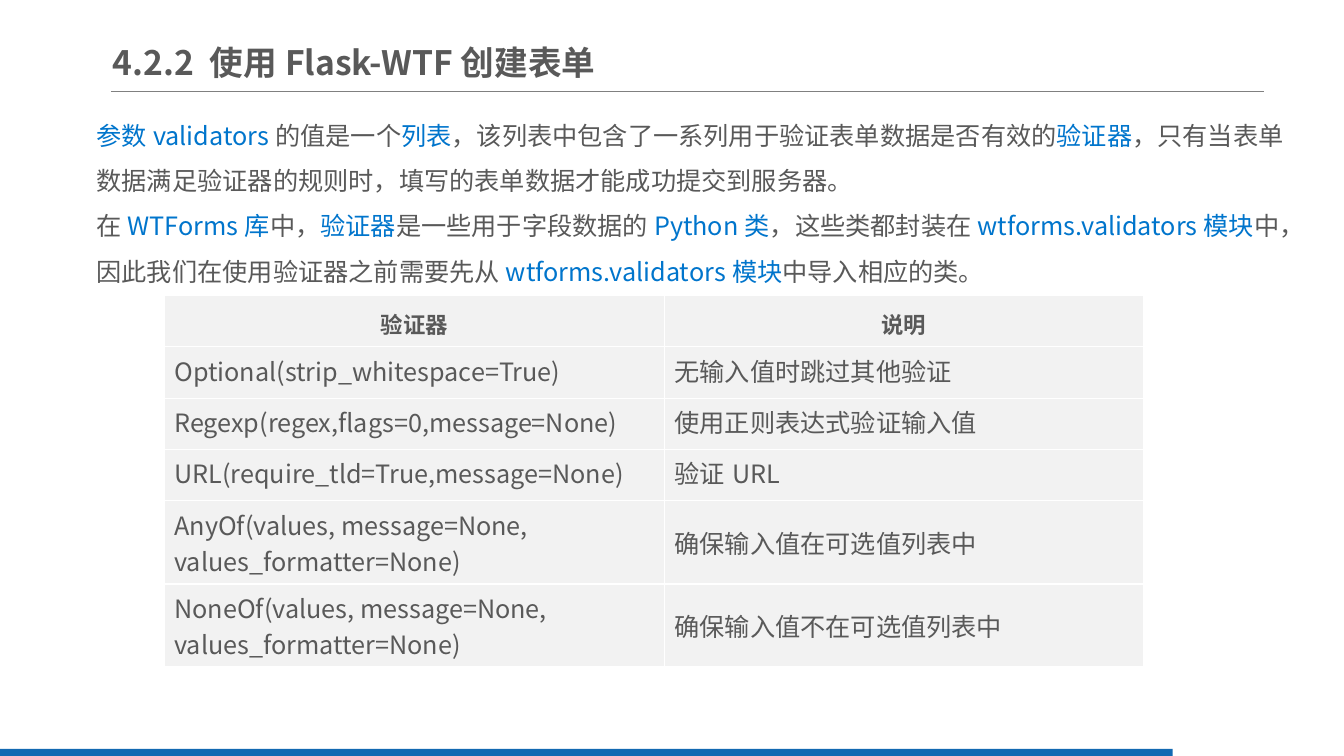
from dataclasses import dataclass

from lxml import etree
from pptx import Presentation
from pptx.dml.color import RGBColor
from pptx.enum.shapes import MSO_CONNECTOR, MSO_SHAPE
from pptx.enum.text import MSO_ANCHOR, MSO_AUTO_SIZE, PP_ALIGN
from pptx.oxml.ns import qn
from pptx.util import Inches, Pt

LEFT, CENTER = PP_ALIGN.LEFT, PP_ALIGN.CENTER
TOP, MIDDLE = MSO_ANCHOR.TOP, MSO_ANCHOR.MIDDLE
STRAIGHT, RECTANGLE = MSO_CONNECTOR.STRAIGHT, MSO_SHAPE.RECTANGLE
FIXED_SIZE = MSO_AUTO_SIZE.NONE
TITLE_ONLY = 5


@dataclass(frozen=True)
class Theme:
    font: str = "Noto Sans CJK SC"
    text: str = "595959"
    accent: str = "0075CC"
    rule: str = "808080"
    bar: str = "1369B2"
    cell: str = "F2F2F2"
    border: str = "FFFFFF"
    title_size: int = 24
    body_size: int = 18
    header_size: int = 16


THEME = Theme()

TITLE = "4.2.2 使用Flask-WTF创建表单"

# Text between vertical bars takes the accent colour.
PARAGRAPHS = [
    "|参数validators|的值是一个|列表|，该列表中包含了一系列用于验证表单数据是否有效的|验证器|，"
    "只有当表单数据满足验证器的规则时，填写的表单数据才能成功提交到服务器。",
    "在|WTForms库|中，|验证器|是一些用于字段数据的|Python类|，这些类都封装在"
    "|wtforms.validators模块|中，因此我们在使用验证器之前需要先从"
    "|wtforms.validators模块|中导入相应的类。",
]

VALIDATORS = [
    ("验证器", "说明"),
    ("Optional(strip_whitespace=True)", "无输入值时跳过其他验证"),
    ("Regexp(regex,flags=0,message=None)", "使用正则表达式验证输入值"),
    ("URL(require_tld=True,message=None)", "验证URL"),
    ("AnyOf(values, message=None,\nvalues_formatter=None)", "确保输入值在可选值列表中"),
    ("NoneOf(values, message=None,\nvalues_formatter=None)", "确保输入值不在可选值列表中"),
]


def format_span(span, size, color, bold=False):
    font = span.font
    font.size = Pt(size)
    font.bold = bold
    font.color.rgb = RGBColor.from_string(color)
    font.name = THEME.font
    latin = span._r.rPr.find(qn("a:latin"))
    east_asian = etree.Element(qn("a:ea"), typeface=THEME.font)
    latin.addnext(east_asian)


def add_rule(page):
    y = Inches(0.91)
    rule = page.shapes.add_connector(STRAIGHT, Inches(1.1), y, Inches(12.54), y)
    rule.line.color.rgb = RGBColor.from_string(THEME.rule)
    rule.line.width = Pt(0.75)
    etree.SubElement(rule._element.spPr, qn("a:effectLst"))


def add_bottom_bar(page):
    bar = page.shapes.add_shape(
        RECTANGLE, 0, Inches(7.43), Inches(11.63), Inches(0.09))
    bar.shadow.inherit = False
    bar.fill.solid()
    bar.fill.fore_color.rgb = RGBColor.from_string(THEME.bar)
    bar.line.fill.background()


def fill_title(page):
    title = page.shapes.title
    title.left, title.top = Inches(1.12), Inches(0.34)
    title.width, title.height = Inches(4.89), Inches(0.55)
    frame = title.text_frame
    frame.text = TITLE
    frame.auto_size = FIXED_SIZE
    frame.word_wrap = True
    frame.vertical_anchor = MIDDLE
    frame.margin_left = frame.margin_right = 0
    frame.margin_top = frame.margin_bottom = Inches(0.07)
    para = frame.paragraphs[0]
    para.alignment = LEFT
    format_span(para.runs[0], THEME.title_size, THEME.text, bold=True)


def add_explanation(page):
    box = page.shapes.add_textbox(
        Inches(0.86), Inches(0.99), Inches(12.1), Inches(1.92))
    frame = box.text_frame
    frame.word_wrap = True
    for index, marked_text in enumerate(PARAGRAPHS):
        para = frame.add_paragraph() if index else frame.paragraphs[0]
        para.line_spacing = 1.5
        for position, piece in enumerate(marked_text.split("|")):
            if piece:
                span = para.add_run()
                span.text = piece
                color = THEME.accent if position % 2 else THEME.text
                format_span(span, THEME.body_size, color)


def add_borders(cell):
    properties = cell._tc.get_or_add_tcPr()
    for side in ("lnL", "lnR", "lnT", "lnB"):
        line = etree.SubElement(properties, qn(f"a:{side}"), w=str(Pt(1)))
        fill = etree.SubElement(line, qn("a:solidFill"))
        etree.SubElement(fill, qn("a:srgbClr"), val=THEME.border)


def fill_cell(cell, text, is_header, anchor):
    add_borders(cell)
    cell.fill.solid()
    cell.fill.fore_color.rgb = RGBColor.from_string(THEME.cell)
    cell.vertical_anchor = anchor
    if is_header:
        cell.margin_left = cell.margin_right = Inches(0.07)
        cell.margin_top = cell.margin_bottom = 0
    cell.text_frame.text = text
    size = THEME.header_size if is_header else THEME.body_size
    for para in cell.text_frame.paragraphs:
        para.alignment = CENTER if is_header else LEFT
        if is_header:
            para.line_spacing = 1.15
        format_span(para.runs[0], size, THEME.text, bold=is_header)


def add_validator_table(page):
    widths = (4.96, 4.75)
    row_height = Inches(0.51)
    table = page.shapes.add_table(
        len(VALIDATORS), len(widths), Inches(1.63), Inches(2.93),
        Inches(sum(widths)), row_height * len(VALIDATORS)).table
    table.horz_banding = False
    table.first_row = False
    for column, width in zip(table.columns, widths):
        column.width = Inches(width)
    for row_index, texts in enumerate(VALIDATORS):
        table.rows[row_index].height = row_height
        is_header = row_index == 0
        is_tall = "\n" in texts[0]
        anchor = MIDDLE if is_header or is_tall else TOP
        for column_index, text in enumerate(texts):
            fill_cell(table.cell(row_index, column_index), text, is_header, anchor)


def main():
    deck = Presentation()
    deck.slide_width, deck.slide_height = Inches(13.33), Inches(7.5)
    page = deck.slides.add_slide(deck.slide_layouts[TITLE_ONLY])
    add_rule(page)
    add_bottom_bar(page)
    fill_title(page)
    add_validator_table(page)
    add_explanation(page)
    deck.save("out.pptx")


if __name__ == "__main__":
    main()
